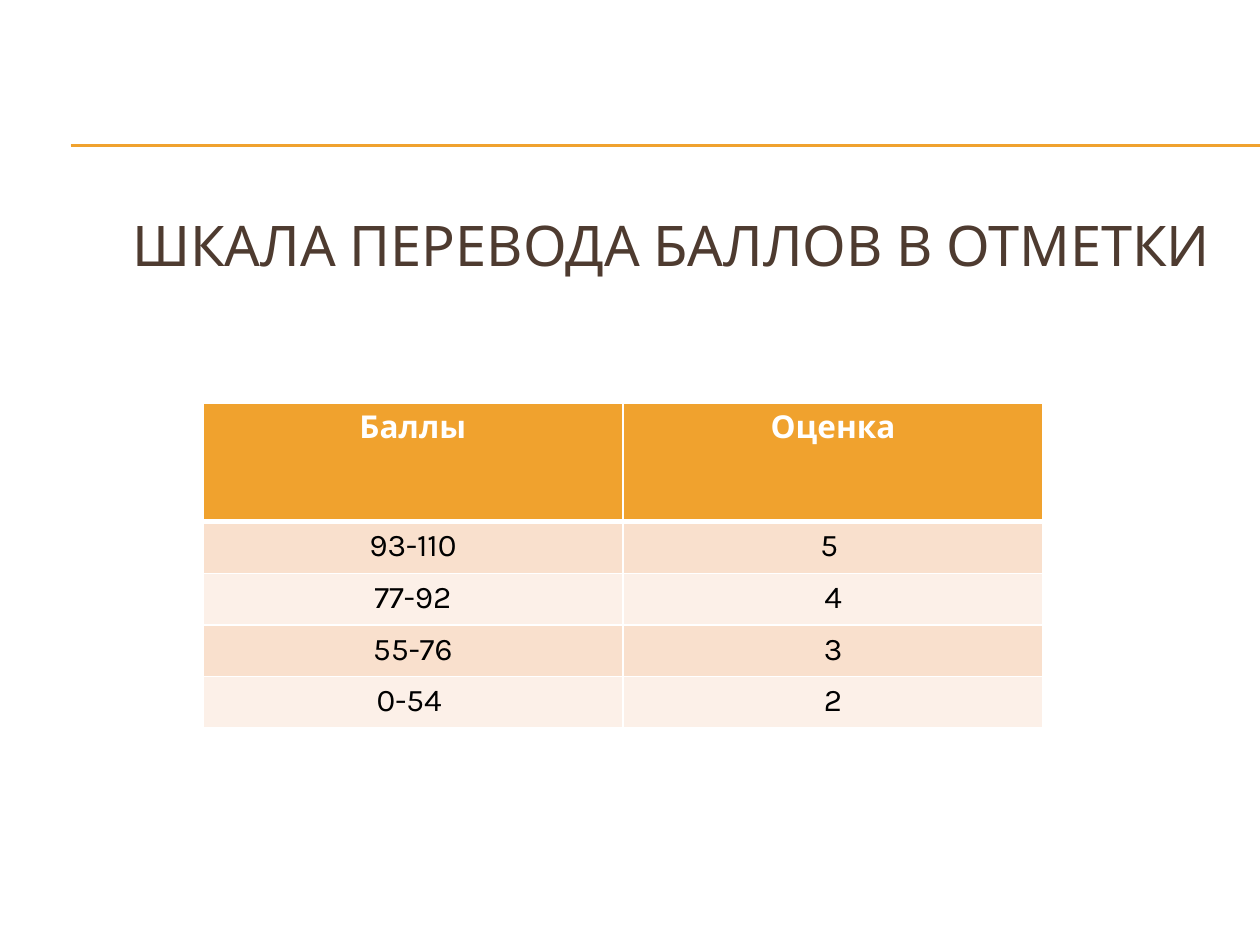
from lxml.etree import SubElement
from pptx import Presentation
from pptx.dml.color import RGBColor
from pptx.enum.shapes import MSO_CONNECTOR as Connector
from pptx.enum.text import PP_ALIGN as Align
from pptx.oxml.ns import qn
from pptx.util import Inches, Pt

ORANGE = RGBColor(0xF0, 0xA2, 0x2E)
BROWN = RGBColor(0x4E, 0x3B, 0x30)
PEACH = RGBColor(0xF9, 0xE0, 0xCD)
CREAM = RGBColor(0xFC, 0xF0, 0xE8)
WHITE = RGBColor(0xFF, 0xFF, 0xFF)
BLACK = RGBColor(0, 0, 0)

GRADES = [
    ("Баллы", "Оценка"),
    ("93-110", "5 "),
    ("77-92", "4"),
    ("55-76", "3"),
    ("0-54 ", "2"),
]


class Deck:
    """Holds the font and the current slide; lengths are on a 100 by 75 grid."""

    font = "Karla"
    unit = Inches(0.1)

    def __init__(self):
        self.prs = Presentation()
        self.prs.slide_width, self.prs.slide_height = self.at(100, 75)
        self.slide = self.prs.slides.add_slide(self.prs.slide_layouts[6])

    def at(self, *cells):
        return [round(c * self.unit) for c in cells]

    def run(self, p, text, size, color, bold=False):
        r = p.add_run()
        r.text = text
        r.font.name, r.font.size, r.font.bold = self.font, Pt(size), bold
        r.font.color.rgb = color

    def rule(self, x1, x2, y):
        line = self.slide.shapes.add_connector(
            Connector.STRAIGHT, *self.at(x1, y, x2, y))
        line.line.color.rgb, line.line.width = ORANGE, Pt(0.75)
        SubElement(line._element.spPr, qn("a:effectLst"))

    def title(self, text, box, indent):
        tf = self.slide.shapes.add_textbox(*self.at(*box)).text_frame
        tf.word_wrap = True
        p = tf.paragraphs[0]
        p._p.get_or_add_pPr().set("indent", str(self.at(indent)[0]))
        self.run(p, text, 32, BROWN)

    def borders(self, cell, bottom):
        """Draws white borders, 1 pt wide except for the given bottom width."""
        tc_pr = cell._tc.get_or_add_tcPr()
        widths = {"a:lnL": 1, "a:lnR": 1, "a:lnT": 1, "a:lnB": bottom}
        for i, (tag, width) in enumerate(widths.items()):
            ln = SubElement(tc_pr, qn(tag), w=str(Pt(width)))
            tc_pr.insert(i, ln)
            fill = SubElement(ln, qn("a:solidFill"))
            SubElement(fill, qn("a:srgbClr"), val=str(WHITE))

    def table(self, rows, box, header_height):
        left, top, width, height = box
        table = self.slide.shapes.add_table(
            len(rows), len(rows[0]), *self.at(*box)).table
        body_height = (height - header_height) / (len(rows) - 1)
        for i, row in enumerate(rows):
            header = i == 0
            table.rows[i].height = self.at(header_height if header else body_height)[0]
            for j, text in enumerate(row):
                cell = table.cell(i, j)
                cell.fill.solid()
                cell.fill.fore_color.rgb = ORANGE if header else (CREAM, PEACH)[i % 2]
                self.borders(cell, 3 if header or i == 0 else 1)
                p = cell.text_frame.paragraphs[0]
                p.alignment = Align.CENTER
                self.run(p, text, 18, WHITE if header else BLACK, header)


def main():
    deck = Deck()
    for y in (11.5, 11.6):
        deck.rule(5.6, 100, y)
    deck.title("ШКАЛА ПЕРЕВОДА БАЛЛОВ В ОТМЕТКИ", (3.5, 16.2, 95, 49.5), indent=6)
    deck.table(GRADES, (16.1, 32, 66.7, 25.8), header_height=9.4)
    deck.prs.save("out.pptx")


if __name__ == "__main__":
    main()
